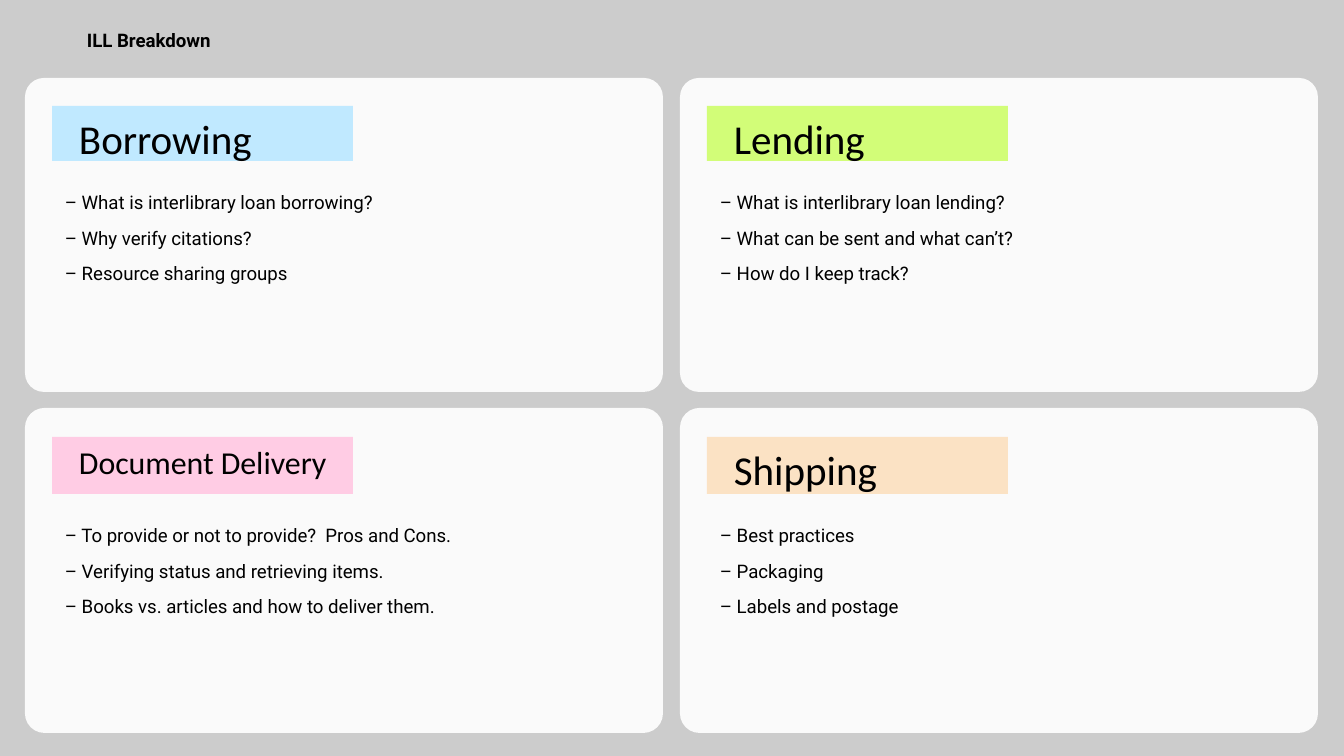
import pptx
import pptx.util
import pptx.dml.color
import pptx.enum.shapes
import pptx.enum.text

SCALE = 914400 / 134.4
KIND = pptx.enum.shapes.MSO_SHAPE
ANCHOR = pptx.enum.text.MSO_ANCHOR
COLORS = {
    "back": "CCCCCC", "card": "FAFAFA", "ink": "000000",
    "blue": "C0E9FF", "lime": "D2FD78", "pink": "FFCCE4", "peach": "FBE2C4",
}
COLS = ((25, 638), (680, 638))
ROWS = ((78, 314, 28, 55), (408, 325, 29, 57))
TOPICS = (
    ("Borrowing", 22, "blue", ("What is interlibrary loan borrowing?",
                               "Why verify citations?",
                               "Resource sharing groups")),
    ("Lending", 22, "lime", ("What is interlibrary loan lending?",
                             "What can be sent and what can’t?",
                             "How do I keep track?")),
    ("Document Delivery", 17.1, "pink", ("To provide or not to provide?  Pros and Cons.",
                                         "Verifying status and retrieving items.",
                                         "Books vs. articles and how to deliver them.")),
    ("Shipping", 22, "peach", ("Best practices", "Packaging", "Labels and postage")),
)


def px(n):
    """Turn px into EMU."""
    return pptx.util.Emu(round(n * SCALE))


def tint(name):
    """Look up a colour by name."""
    return pptx.dml.color.RGBColor.from_string(COLORS[name])


def block(slide, kind, box, color):
    """Add a plain filled shape."""
    shape = slide.shapes.add_shape(kind, *map(px, box))
    shape.shadow.inherit = False
    shape.fill.solid()
    shape.fill.fore_color.rgb = tint(color)
    shape.line.fill.background()
    return shape


def frame(shape, left, right, edge, anchor=ANCHOR.TOP):
    """Set margins, wrapping and anchor of a text frame."""
    text = shape.text_frame
    text.word_wrap = True
    text.vertical_anchor = anchor
    text.margin_left, text.margin_right = px(left), px(right)
    text.margin_top = text.margin_bottom = px(edge)
    return text


def write(para, words, size, font, bold=False):
    """Add one styled run to a left-aligned paragraph."""
    para.alignment = pptx.enum.text.PP_ALIGN.LEFT
    para.line_spacing = 1.15
    run = para.add_run()
    run.text = words
    run.font.size = pptx.util.Pt(size)
    run.font.name = font
    run.font.bold = bold
    run.font.color.rgb = tint("ink")


def title(slide, box, words):
    """Add the slide heading."""
    text = frame(slide.shapes.add_textbox(*map(px, box)), 0, 0, 0, ANCHOR.MIDDLE)
    write(text.paragraphs[0], words, 10, "Roboto", True)


def label(slide, box, name, size, color):
    """Add a coloured label with a narrow right margin."""
    text = frame(block(slide, KIND.RECTANGLE, box, color), 27, 7, 0)
    write(text.paragraphs[0], name, size, "Calibri")


def points(slide, box, items):
    """Add a dashed list with hanging indents."""
    text = frame(slide.shapes.add_textbox(*map(px, box)), 27, 27, 27)
    for i, item in enumerate(items):
        para = text.paragraphs[0] if i == 0 else text.add_paragraph()
        props = para._p.get_or_add_pPr()
        props.set("marL", str(px(27)))
        props.set("indent", str(px(-14)))
        para.space_before = pptx.util.Pt(5 if i else 0)
        write(para, "– " + item, 10, "Roboto")


def card(slide, box, drop, tall, topic):
    """Add a rounded card with its label and list."""
    left, top, wide, high = box
    name, size, color, items = topic
    panel = block(slide, KIND.ROUNDED_RECTANGLE, box, "card")
    panel.adjustments[0] = 0.06
    label(slide, (left + 27, top + drop, 301, tall), name, size, color)
    points(slide, (left, top + drop + tall, wide, 191), items)


def main():
    """Build and save the slide."""
    deck = pptx.Presentation()
    deck.slide_width, deck.slide_height = px(1344), px(756)
    slide = deck.slides.add_slide(deck.slide_layouts[6])
    slide.background.fill.solid()
    slide.background.fill.fore_color.rgb = tint("back")
    title(slide, (87, 27, 543, 23), "ILL Breakdown")
    for i, topic in enumerate(TOPICS):
        left, wide = COLS[i % 2]
        top, high, drop, tall = ROWS[i // 2]
        card(slide, (left, top, wide, high), drop, tall, topic)
    deck.save("out.pptx")


if __name__ == "__main__":
    main()
